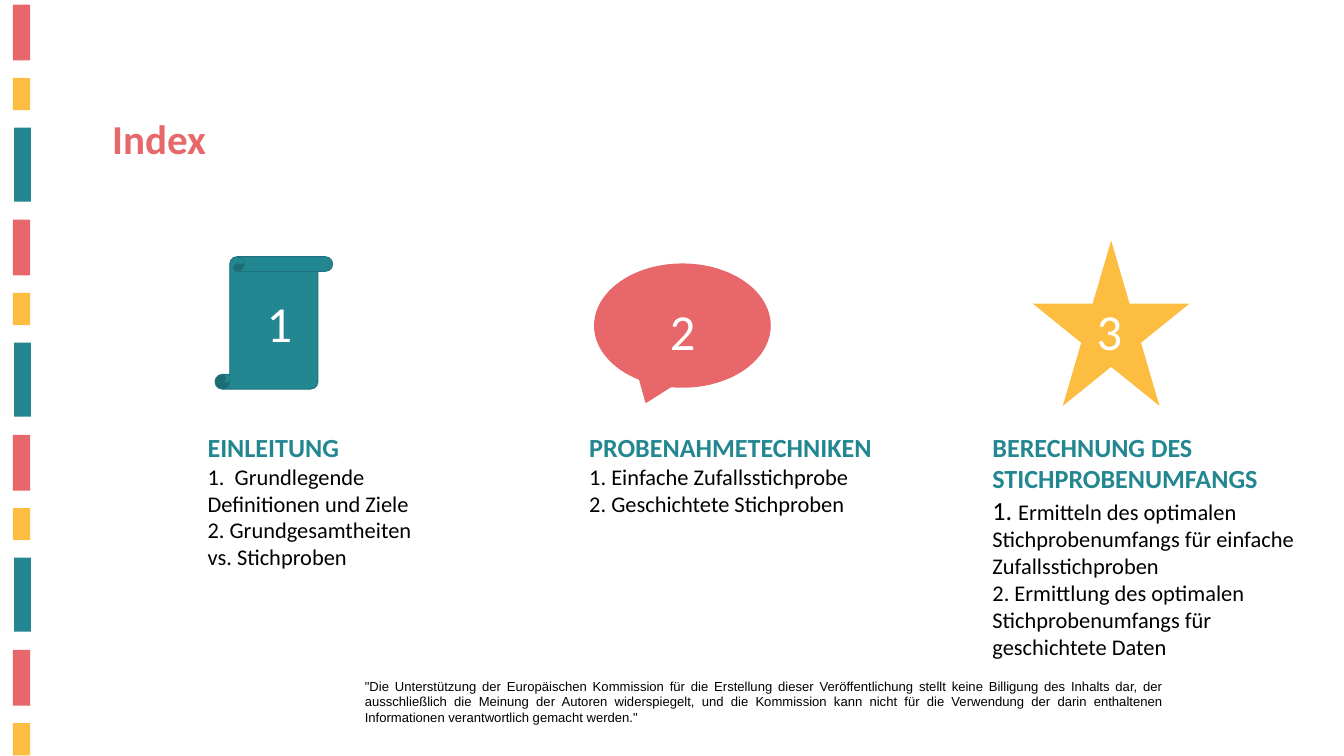
from dataclasses import dataclass

from pptx import Presentation
from pptx.dml.color import RGBColor
from pptx.enum.shapes import MSO_SHAPE
from pptx.enum.text import MSO_ANCHOR, MSO_AUTO_SIZE, PP_ALIGN
from pptx.util import Inches, Pt

CORAL = RGBColor(0xE8, 0x67, 0x6A)
TITLE_CORAL = RGBColor(0xE7, 0x68, 0x6A)
AMBER = RGBColor(0xFD, 0xBD, 0x40)
TEAL = RGBColor(0x23, 0x87, 0x91)
DARK_TEAL = RGBColor(0x1E, 0x73, 0x7C)
BLACK = RGBColor(0, 0, 0)
WHITE = RGBColor(255, 255, 255)

COLUMNS, ROWS = 20, 11.25
SLIDE_WIDTH, SLIDE_HEIGHT = Inches(20), Inches(11.25)


@dataclass
class Box:
    """A rectangle in grid columns and rows."""
    left: float
    top: float
    width: float
    height: float

    def inner(self, left, top, width, height):
        """Return a box offset from this box's corner."""
        return Box(self.left + left, self.top + top, width, height)

    def emu(self):
        """Return left, top, width and height as slide lengths."""
        column, row = SLIDE_WIDTH / COLUMNS, SLIDE_HEIGHT / ROWS
        return (round(self.left * column), round(self.top * row),
                round(self.width * column), round(self.height * row))


@dataclass
class Section:
    """An index entry with its icon, number, heading and items."""
    box: Box
    icon: MSO_SHAPE
    icon_offset: tuple
    adjustments: tuple
    color: RGBColor
    number: str
    number_offset: tuple
    heading: str
    items: list
    outline: RGBColor = None


SECTIONS = [
    Section(Box(2.99, 3.58, 3.42, 5.68), MSO_SHAPE.VERTICAL_SCROLL,
            (0.21, 0.24, 1.75, 1.97), (0.125,), TEAL, "1", (0.88, 0.72, 1.58, 1.01),
            "EINLEITUNG",
            [[("1.  Grundlegende Definitionen und Ziele", 24)],
             [("2. Grundgesamtheiten vs. Stichproben", 24)]], DARK_TEAL),
    Section(Box(8.67, 3.58, 4.55, 4.88), MSO_SHAPE.OVAL_CALLOUT,
            (0.17, 0.34, 2.63, 1.85), (-0.208, 0.625), CORAL, "2", (1.2, 0.83, 1.08, 1.01),
            "PROBENAHMETECHNIKEN",
            [[("1. Einfache Zufallsstichprobe", 24)],
             [("2. Geschichtete Stichproben", 24)]]),
    Section(Box(14.67, 3.58, 4.9, 5.28), MSO_SHAPE.STAR_5_POINT,
            (0.7, 0, 2.33, 2.46), (0.191, 1.051, 1.106), AMBER, "3", (1.55, 0.83, 1.5, 1.01),
            "BERECHNUNG DES STICHPROBENUMFANGS",
            [[("1. ", 28),
              ("Ermitteln des optimalen Stichprobenumfangs für einfache Zufallsstichproben", 24)],
             [("2. Ermittlung des optimalen Stichprobenumfangs für geschichtete Daten", 24)]]),
]

DISCLAIMER = (
    '"Die Unterstützung der Europäischen Kommission für die Erstellung dieser '
    "Veröffentlichung stellt keine Billigung des Inhalts dar, der ausschließlich die "
    "Meinung der Autoren widerspiegelt, und die Kommission kann nicht für die Verwendung "
    'der darin enthaltenen Informationen verantwortlich gemacht werden."'
)


def format_font(font, size, color, bold=False, name="Calibri"):
    """Set the look of a font."""
    font.name, font.size, font.bold = name, Pt(size), bold
    font.color.rgb = color


def add_text(slide, box, text, size, color, bold=False, name="Calibri"):
    """Add a wrapping text box and return its text frame."""
    frame = slide.shapes.add_textbox(*box.emu()).text_frame
    frame.word_wrap = True
    frame.text = text
    format_font(frame.paragraphs[0].runs[0].font, size, color, bold, name)
    return frame


def add_filled(slide, kind, box, color, outline=None):
    """Add a flat preset shape."""
    shape = slide.shapes.add_shape(kind, *box.emu())
    shape.shadow.inherit = False
    shape.fill.solid()
    shape.fill.fore_color.rgb = color
    if outline is None:
        shape.line.fill.background()
    else:
        shape.line.color.rgb = outline
        shape.line.width = Pt(1)
    return shape


def place_stripes(slide, box):
    """Repeat the three coloured bars down the box until it ends."""
    bars = [(0, 0, 0.26, 0.83, CORAL), (0, 1.09, 0.26, 0.48, AMBER),
            (0.02, 1.83, 0.25, 1.1, TEAL)]
    pitch = 3.2
    for cycle in range(4):
        for left, top, width, height, color in bars:
            offset = cycle * pitch + top
            if offset + height <= box.height + 0.01:
                bar = box.inner(left, offset, width, height)
                add_filled(slide, MSO_SHAPE.RECTANGLE, bar, color)


def place_title(slide, box):
    """Place and format the title."""
    title = slide.shapes.title
    title.left, title.top, title.width, title.height = box.emu()
    frame = title.text_frame
    frame.text = "Index"
    frame.word_wrap = True
    frame.auto_size = MSO_AUTO_SIZE.NONE
    frame.vertical_anchor = MSO_ANCHOR.TOP
    frame.paragraphs[0].alignment = PP_ALIGN.LEFT
    format_font(frame.paragraphs[0].runs[0].font, 44, TITLE_CORAL, True)


def place_section(slide, section):
    """Place a numbered icon above its heading and items."""
    box = section.box
    icon = add_filled(slide, section.icon, box.inner(*section.icon_offset),
                      section.color, section.outline)
    for index, value in enumerate(section.adjustments):
        icon.adjustments[index] = value
    add_text(slide, box.inner(*section.number_offset), section.number, 54, WHITE)
    text_box = box.inner(0, 2.79, box.width, box.height - 2.79)
    frame = add_text(slide, text_box, section.heading, 28, TEAL, True)
    for item in section.items:
        paragraph = frame.add_paragraph()
        for text, size in item:
            run = paragraph.add_run()
            run.text = text
            format_font(run.font, size, BLACK)


def place_disclaimer(slide, box):
    """Place the justified disclaimer."""
    frame = add_text(slide, box, DISCLAIMER, 14, BLACK, name="Arial")
    frame.paragraphs[0].alignment = PP_ALIGN.JUSTIFY


def main():
    """Build and save the index slide."""
    deck = Presentation()
    deck.slide_width, deck.slide_height = SLIDE_WIDTH, SLIDE_HEIGHT
    slide = deck.slides.add_slide(deck.slide_layouts[5])
    place_stripes(slide, Box(0.19, 0.07, 0.27, 11.18))
    place_disclaimer(slide, Box(5.33, 10.04, 12.08, 0.81))
    place_title(slide, Box(1.57, 1.64, 6.77, 1.58))
    for section in SECTIONS:
        place_section(slide, section)
    deck.save("out.pptx")


if __name__ == "__main__":
    main()
